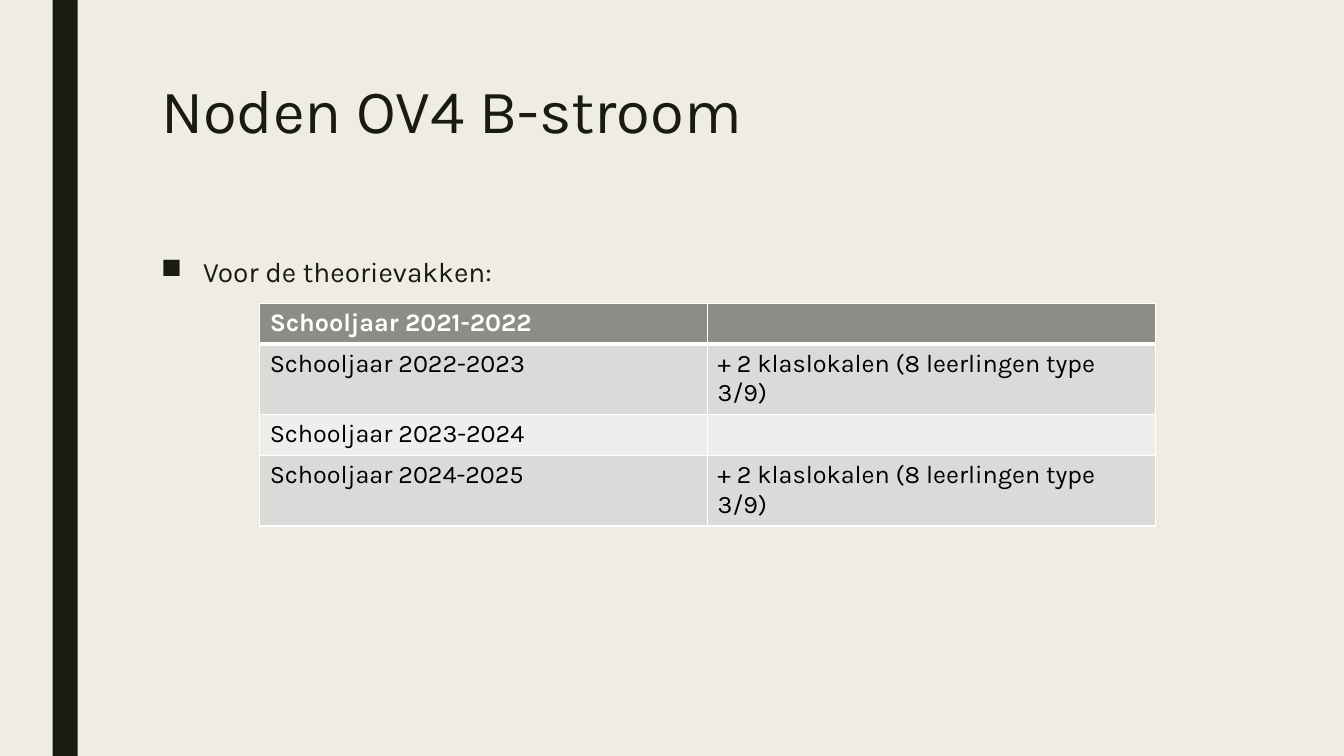
from dataclasses import dataclass

from lxml.etree import SubElement
from pptx import Presentation
from pptx.dml.color import RGBColor
from pptx.enum.shapes import MSO_SHAPE
from pptx.oxml import parse_xml
from pptx.oxml.ns import nsdecls, qn
from pptx.util import Pt


@dataclass(frozen=True)
class Theme:
    font: str = "Karla"
    paper: str = "EFEDE3"
    ink: str = "191B0E"
    black: str = "000000"
    white: str = "FFFFFF"
    head: str = "8C8D86"
    bands: tuple = ("DADBD9", "EEEEED")
    title: int = 44
    body: int = 20
    cell: int = 18


THEME = Theme()
NEED = "+ 2 klaslokalen (8 leerlingen type 3/9)"
ROWS = [
    ("Schooljaar 2021-2022", ""),
    ("Schooljaar 2022-2023", NEED),
    ("Schooljaar 2023-2024", ""),
    ("Schooljaar 2024-2025", NEED),
]


def paint(fill, color):
    fill.solid()
    fill.fore_color.rgb = RGBColor.from_string(color)


def write(para, text, size, color, bold=False):
    run = para.add_run()
    run.text = text
    style = {"name": THEME.font, "size": Pt(size), "bold": bold}
    for key, value in style.items():
        setattr(run.font, key, value)
    run.font.color.rgb = RGBColor.from_string(color)


def add_bar(slide, left, width, height):
    bar = slide.shapes.add_shape(
        MSO_SHAPE.RECTANGLE, Pt(left), Pt(0), Pt(width), height)
    bar.shadow.inherit = False
    paint(bar.fill, THEME.ink)
    bar.line.fill.background()


def add_text(slide, box, text, size, form):
    shape = slide.shapes.add_textbox(*map(Pt, box))
    shape.text_frame.word_wrap = True
    para = shape.text_frame.paragraphs[0]
    for key, value in form.items():
        setattr(para, key, value)
    write(para, text, size, THEME.ink)
    return para


def add_bullet(para, indent):
    props = para._p.get_or_add_pPr()
    props.set("marL", str(Pt(indent)))
    props.set("indent", str(-Pt(indent)))
    SubElement(props, qn("a:buChar")).set("char", "■")


def set_edges(cell, widths):
    """Draw white cell borders; widths maps the sides L, R, T, B to points."""
    props = cell._tc.get_or_add_tcPr()
    for index, (side, width) in enumerate(widths.items()):
        edge = parse_xml(
            f'<a:ln{side} {nsdecls("a")} w="{Pt(width)}"><a:solidFill>'
            f'<a:srgbClr val="{THEME.white}"/></a:solidFill></a:ln{side}>')
        props.insert(index, edge)


def add_table(slide, left, top, col, row):
    count, span = len(ROWS), len(ROWS[0])
    table = slide.shapes.add_table(
        count, span, Pt(left), Pt(top), Pt(col * span), Pt(row * count)).table
    for r, texts in enumerate(ROWS):
        head = r == 0
        fill = THEME.head if head else THEME.bands[(r - 1) % 2]
        color = THEME.white if head else THEME.black
        edges = {"L": 1, "R": 1, "T": 3 if r == 1 else 1, "B": 3 if head else 1}
        for c, text in enumerate(texts):
            cell = table.cell(r, c)
            paint(cell.fill, fill)
            set_edges(cell, edges)
            if text:
                write(cell.text_frame.paragraphs[0], text, THEME.cell, color, head)


def main():
    deck = Presentation()
    deck.slide_width, deck.slide_height = Pt(960), Pt(540)
    slide = deck.slides.add_slide(deck.slide_layouts[6])
    paint(slide.background.fill, THEME.paper)
    add_bar(slide, 37.5, 18, deck.slide_height)
    add_text(slide, (108, 54, 756, 116.6), "Noden OV4 B-stroom",
             THEME.title, {"line_spacing": 0.89})
    para = add_text(
        slide, (108, 180, 756, 282), "Voor de theorievakken:", THEME.body,
        {"line_spacing": 0.94, "space_before": Pt(10), "space_after": Pt(2)})
    add_bullet(para, 30)
    add_table(slide, 185.5, 216.5, 320, 29.2)
    deck.save("out.pptx")


if __name__ == "__main__":
    main()
